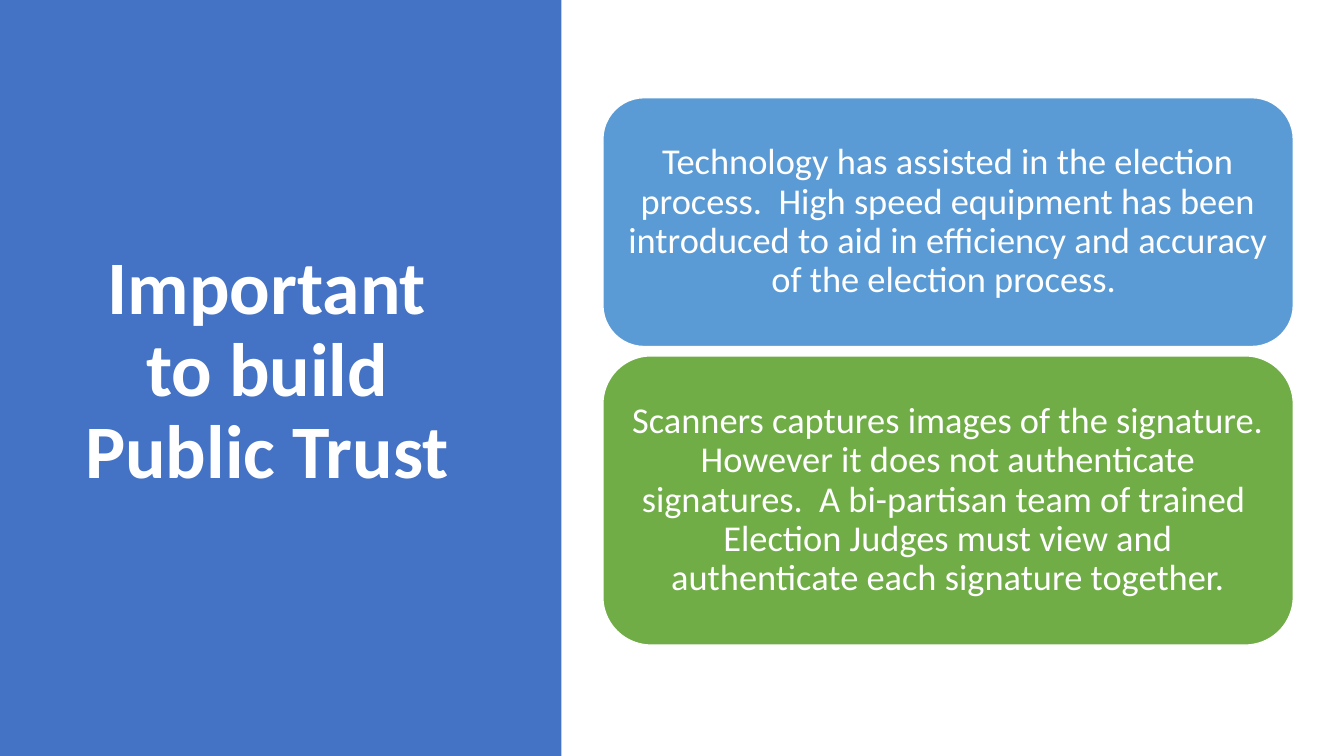
import pptx
import pptx.util
import pptx.dml.color
import pptx.enum.shapes
import pptx.enum.text

Pt = pptx.util.Pt
RGBColor = pptx.dml.color.RGBColor
SHAPES = pptx.enum.shapes.MSO_SHAPE

WHITE = RGBColor(0xFF, 0xFF, 0xFF)
PANEL_BLUE = RGBColor(0x44, 0x72, 0xC4)
CARD_BLUE = RGBColor(0x5B, 0x9B, 0xD5)
CARD_GREEN = RGBColor(0x70, 0xAD, 0x47)

CARD_LEFT, CARD_WIDTH = 430.6, 493.2
CARDS = [
    (69.8, 177.8, CARD_BLUE,
     "Technology has assisted in the election process.  High speed equipment "
     "has been introduced to aid in efficiency and accuracy of the election "
     "process. "),
    (254.2, 206.6, CARD_GREEN,
     "Scanners captures images of the signature. However it does not "
     "authenticate signatures.  A bi-partisan team of trained  Election Judges "
     "must view and authenticate each signature together."),
]


def set_attributes(target, values):
    for name, value in values.items():
        setattr(target, name, value)


def add_block(page, kind, bounds, fill):
    block = page.shapes.add_shape(kind, *map(Pt, bounds))
    block.shadow.inherit = False
    block.fill.solid()
    block.fill.fore_color.rgb = fill
    block.line.fill.background()
    return block


def write_centred(shape, text, inset, font):
    """Fill the shape with one wrapped paragraph, centred both ways."""
    frame = shape.text_frame
    set_attributes(frame, {
        "word_wrap": True,
        "vertical_anchor": pptx.enum.text.MSO_ANCHOR.MIDDLE,
        "margin_left": Pt(inset), "margin_right": Pt(inset),
        "margin_top": Pt(inset), "margin_bottom": Pt(inset),
    })
    para = frame.paragraphs[0]
    set_attributes(para, {
        "alignment": pptx.enum.text.PP_ALIGN.CENTER, "line_spacing": 0.9,
    })
    span = para.add_run()
    span.text = text
    set_attributes(span.font, {"name": "Calibri", **font})
    span.font.color.rgb = WHITE


def add_title(page, text):
    box = page.shapes.add_textbox(Pt(41), Pt(49), Pt(299.6), Pt(433.4))
    write_centred(box, text, 10, {"size": Pt(54), "bold": True})


def add_card(page, top, height, fill, text):
    bounds = (CARD_LEFT, top, CARD_WIDTH, height)
    card = add_block(page, SHAPES.ROUNDED_RECTANGLE, bounds, fill)
    card.line.color.rgb = WHITE
    card.line.width = Pt(1)
    write_centred(card, text, 8, {"size": Pt(26), "bold": False})


def main():
    deck = pptx.Presentation()
    set_attributes(deck, {"slide_width": Pt(960), "slide_height": Pt(540)})
    page = deck.slides.add_slide(deck.slide_layouts[6])
    add_block(page, SHAPES.RECTANGLE, (0, 0, 401, 540), PANEL_BLUE)
    add_title(page, "Important to build Public Trust")
    for card in CARDS:
        add_card(page, *card)
    deck.save("out.pptx")


if __name__ == "__main__":
    main()
